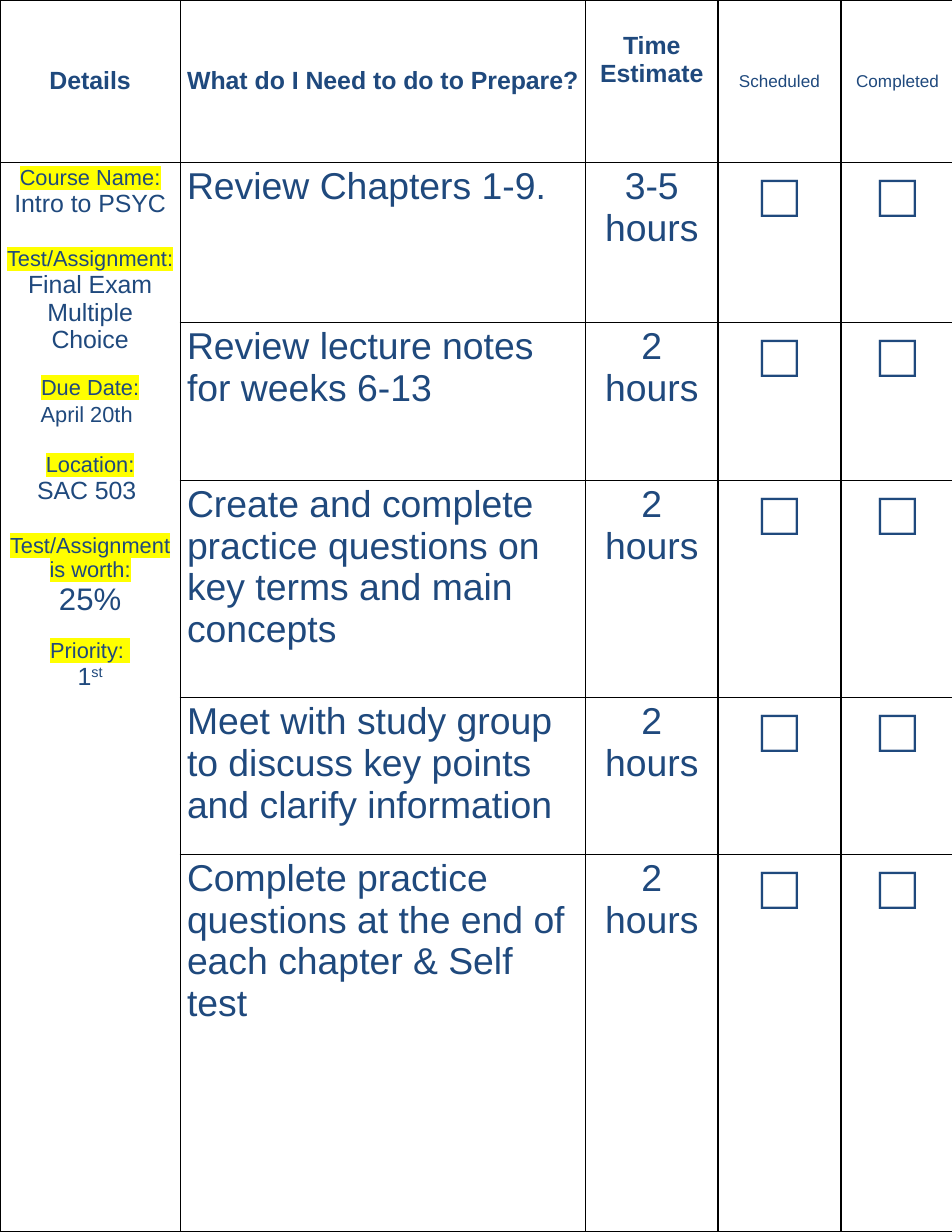
from lxml.etree import SubElement
from pptx import Presentation
from pptx.dml.color import RGBColor
from pptx.enum.text import MSO_ANCHOR, PP_ALIGN
from pptx.oxml.ns import qn
from pptx.util import Inches, Pt

COLS = [1.61, 3.62, 1.18, 1.1, 1.01]
ROWS = [1.45, 1.43, 1.41, 1.94, 1.4, 3.37]
HEADS = [("Details", 16), ("What do I Need to do to Prepare?", 16),
         ("Time Estimate", 16), ("Scheduled", 11), ("Completed", 11)]
TASKS = [
    ("Review Chapters 1-9.", "3-5 hours"),
    ("Review lecture notes for weeks 6-13", "2 hours"),
    ("Create and complete practice questions on key terms and main concepts", "2 hours"),
    ("Meet with study group to discuss key points and clarify information", "2 hours"),
    ("Complete practice questions at the end of each chapter & Self test", "2 hours"),
]
# Label, gap above it in points, then (text, size) runs of its value
FACTS = [
    ("Course Name:", 0, [("Intro to PSYC", 16)]),
    ("Test/Assignment:", 18.4, [("Final Exam Multiple Choice", 16)]),
    ("Due Date:", 13.8, [("April 20th", 14), (" ", 16)]),
    ("Location:", 16.1, [("SAC 503 ", 16)]),
    ("Test/Assignment is worth:", 18.4, [("25%", 20)]),
    ("Priority: ", 13.8, [("1", 16)]),
]


def color(code):
    return RGBColor.from_string(code)


class Sheet:
    ink, line, mark = "1F497D", "000000", "FFFF00"
    face = "Arial"

    def __init__(self, slide):
        self.slide = slide

    def table(self, cols, rows):
        frame = self.slide.shapes.add_table(
            len(rows), len(cols), 0, 0, Inches(sum(cols)), Inches(sum(rows)))
        grid = frame.table
        grid.first_row = grid.horz_banding = False
        for col, wide in zip(grid.columns, cols):
            col.width = Inches(wide)
        for row, high in zip(grid.rows, rows):
            row.height = Inches(high)
        for cell in grid.iter_cells():
            self.frame(cell)
        return grid

    def frame(self, cell):
        cell.margin_left = cell.margin_right = Inches(0.06)
        cell.margin_top = cell.margin_bottom = Inches(0.03)
        props = cell._tc.get_or_add_tcPr()
        for side in ("lnL", "lnR", "lnT", "lnB"):
            edge = SubElement(props, qn("a:" + side), w=str(Pt(1)))
            fill = SubElement(edge, qn("a:solidFill"))
            SubElement(fill, qn("a:srgbClr"), val=self.line)
        cell.fill.background()

    def para(self, cell, first=True, align=PP_ALIGN.CENTER, gap=0):
        body = cell.text_frame
        para = body.paragraphs[0] if first else body.add_paragraph()
        para.alignment = align
        if gap:
            para.space_before = Pt(gap)
        return para

    def run(self, para, text, size, bold=False, face=None, lit=False, sup=False):
        run = para.add_run()
        run.text = text
        font = run.font
        font.size, font.bold = Pt(size), bold
        font.color.rgb = color(self.ink)
        props = font._element
        if lit:
            tint = SubElement(props, qn("a:highlight"))
            SubElement(tint, qn("a:srgbClr"), val=self.mark)
        if sup:
            props.set("baseline", "30000")
        font.name = face or self.face


def main():
    deck = Presentation()
    deck.slide_width, deck.slide_height = Inches(8.5), Inches(11)
    sheet = Sheet(deck.slides.add_slide(deck.slide_layouts[6]))
    grid = sheet.table(COLS, ROWS)

    # Header row
    for col, (text, size) in enumerate(HEADS):
        cell = grid.cell(0, col)
        cell.vertical_anchor = MSO_ANCHOR.MIDDLE
        sheet.run(sheet.para(cell), text, size, bold=size == 16)
    time = grid.cell(0, 2)
    time.vertical_anchor = MSO_ANCHOR.TOP
    time.margin_top = Inches(0.29)

    # Details column
    facts = grid.cell(1, 0)
    facts.merge(grid.cell(len(TASKS), 0))
    for num, (label, gap, value) in enumerate(FACTS):
        sheet.run(sheet.para(facts, num == 0, gap=gap), label, 14, lit=True)
        para = sheet.para(facts, False)
        for text, size in value:
            sheet.run(para, text, size)
    sheet.run(para, "st", 16, sup=True)

    # Tasks with times and check boxes
    for row, (task, hours) in enumerate(TASKS, 1):
        sheet.run(sheet.para(grid.cell(row, 1), align=PP_ALIGN.LEFT), task, 24)
        sheet.run(sheet.para(grid.cell(row, 2)), hours, 24)
        for col in (3, 4):
            sheet.run(sheet.para(grid.cell(row, col)), "□", 40, face="Courier New")

    deck.save("out.pptx")


if __name__ == "__main__":
    main()
